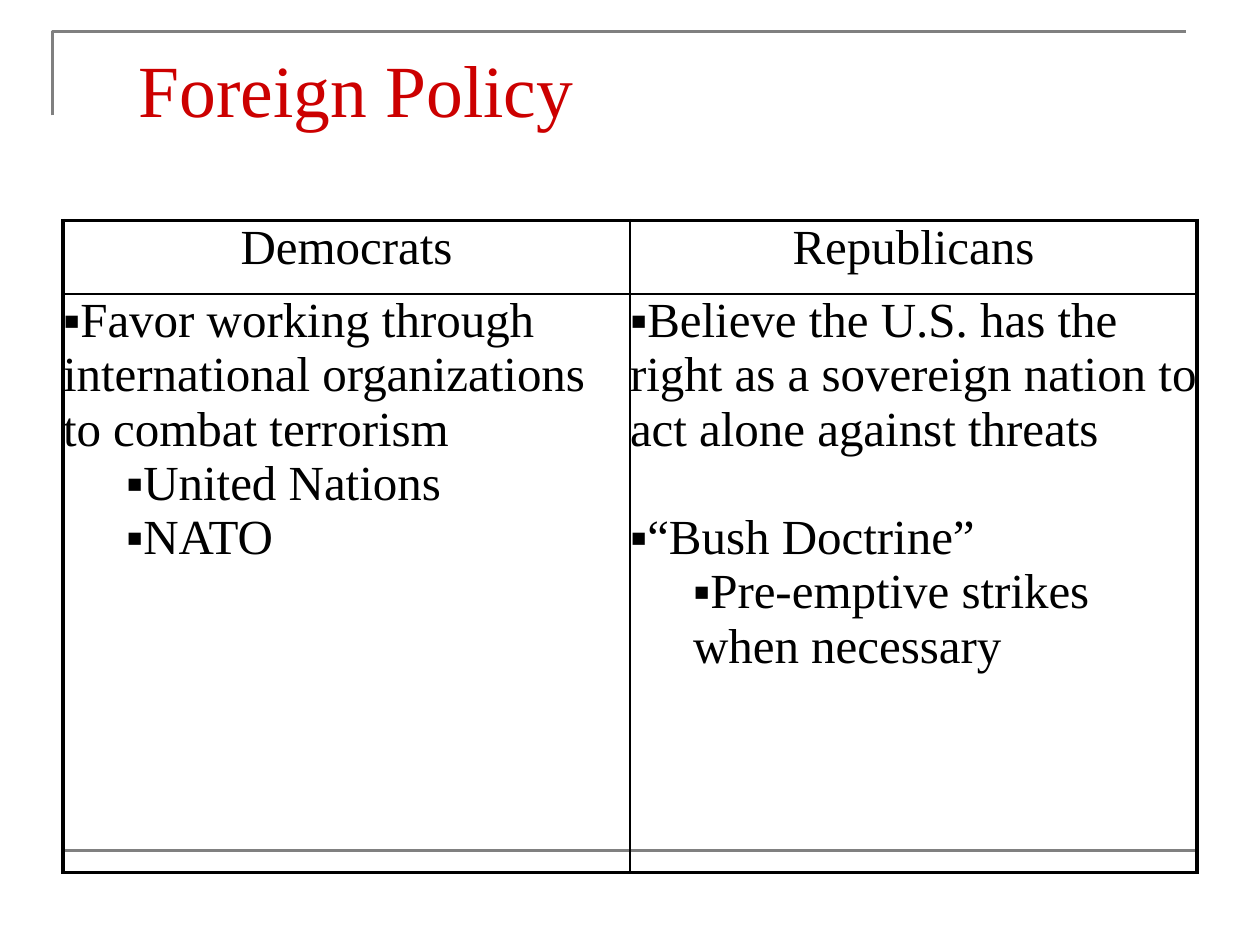
from dataclasses import dataclass

import pptx
import pptx.dml.color
import pptx.enum.shapes
import pptx.enum.text
import pptx.oxml.ns
import pptx.util
from lxml import etree

RGB = pptx.dml.color.RGBColor
RED = RGB(0xCC, 0x00, 0x00)
GREY = RGB(0x80, 0x80, 0x80)
BLACK = RGB(0x00, 0x00, 0x00)
FONT = "Times New Roman"
ALIGN = pptx.enum.text.PP_ALIGN
EMU_PER_PX = 914400 // 96
qn = pptx.oxml.ns.qn


@dataclass
class Item:
    text: str
    level: int = 0
    before: int = 0  # points


@dataclass
class Column:
    heading: str
    items: list[Item]


COLUMNS = [
    Column("Democrats", [
        Item("Favor working through international organizations to combat terrorism"),
        Item("United Nations", level=1),
        Item("NATO", level=1),
    ]),
    Column("Republicans", [
        Item("Believe the U.S. has the right as a sovereign nation to act alone against threats"),
        Item("“Bush Doctrine”", before=31),
        Item("Pre-emptive strikes when necessary", level=1),
    ]),
]


def px(n: int) -> pptx.util.Emu:
    return pptx.util.Emu(n * EMU_PER_PX)


def write(p, text: str, *, size: int = 28, color: RGB = BLACK, align=ALIGN.LEFT,
          level: int = 0, before: int = 0, bullet: str = "") -> None:
    p.alignment = align
    p.level = level
    p.space_before = pptx.util.Pt(before)
    if bullet:
        pPr = p._p.get_or_add_pPr()
        pPr.set("marL", str(px(48 * level)))
        pPr.set("indent", "0")
        bullet_color = etree.SubElement(pPr, qn("a:buClr"))
        etree.SubElement(bullet_color, qn("a:srgbClr"), val=str(color))
        etree.SubElement(pPr, qn("a:buFont"), typeface=FONT)
        etree.SubElement(pPr, qn("a:buChar"), char=bullet)
    r = p.add_run()
    r.text = text
    r.font.name = FONT
    r.font.size = pptx.util.Pt(size)
    r.font.color.rgb = color


def set_borders(cell, widths: dict[str, float]) -> None:
    tcPr = cell._tc.get_or_add_tcPr()
    for side, width in widths.items():
        ln = etree.SubElement(tcPr, qn(f"a:ln{side}"), w=str(pptx.util.Pt(width)))
        fill = etree.SubElement(ln, qn("a:solidFill"))
        etree.SubElement(fill, qn("a:srgbClr"), val=str(BLACK))


def style_rule(sp) -> None:
    sp.line.color.rgb = GREY
    sp.line.width = pptx.util.Pt(1.5)


prs = pptx.Presentation()
prs.slide_width, prs.slide_height = px(960), px(720)
s = prs.slides.add_slide(prs.slide_layouts[5])

# Corner bracket and bottom rule
builder = s.shapes.build_freeform(40, 88, scale=EMU_PER_PX)
builder.add_line_segments([(40, 24), (904, 24)], close=False)
bracket = builder.convert_to_shape()
bracket.fill.background()
bracket.shadow.inherit = False
style_rule(bracket)

rule = s.shapes.add_connector(pptx.enum.shapes.MSO_CONNECTOR.STRAIGHT,
                              px(48), px(648), px(912), px(648))
style_rule(rule)
etree.SubElement(rule._element.spPr, qn("a:effectLst"))

# Title
title = s.shapes.title
title.left, title.top, title.width, title.height = px(96), px(29), px(816), px(120)
tf = title.text_frame
tf.word_wrap = True
tf.auto_size = pptx.enum.text.MSO_AUTO_SIZE.NONE
tf.vertical_anchor = pptx.enum.text.MSO_ANCHOR.TOP
write(tf.paragraphs[0], "Foreign Policy", size=42, color=RED)

# Comparison table
TABLE_WIDTH = 864
ROW_HEIGHTS = [56, 441]
table = s.shapes.add_table(len(ROW_HEIGHTS), len(COLUMNS), px(48), px(168),
                           px(TABLE_WIDTH), px(sum(ROW_HEIGHTS))).table
table.first_row = table.horz_banding = False
for row, height in zip(table.rows, ROW_HEIGHTS):
    row.height = px(height)

last_row, last_col = len(ROW_HEIGHTS) - 1, len(COLUMNS) - 1
for j, column in enumerate(COLUMNS):
    table.columns[j].width = px(TABLE_WIDTH // len(COLUMNS))
    for i in range(len(ROW_HEIGHTS)):
        cell = table.cell(i, j)
        cell.margin_left = cell.margin_right = cell.margin_top = cell.margin_bottom = 0
        outer = {"L": j == 0, "R": j == last_col, "T": i == 0, "B": i == last_row}
        set_borders(cell, {side: 2.25 if edge else 1 for side, edge in outer.items()})
        cell.fill.background()
    write(table.cell(0, j).text_frame.paragraphs[0], column.heading, align=ALIGN.CENTER)
    tf = table.cell(1, j).text_frame
    for n, item in enumerate(column.items):
        p = tf.add_paragraph() if n else tf.paragraphs[0]
        write(p, item.text, level=item.level, before=item.before, bullet="▪")

prs.save("out.pptx")
